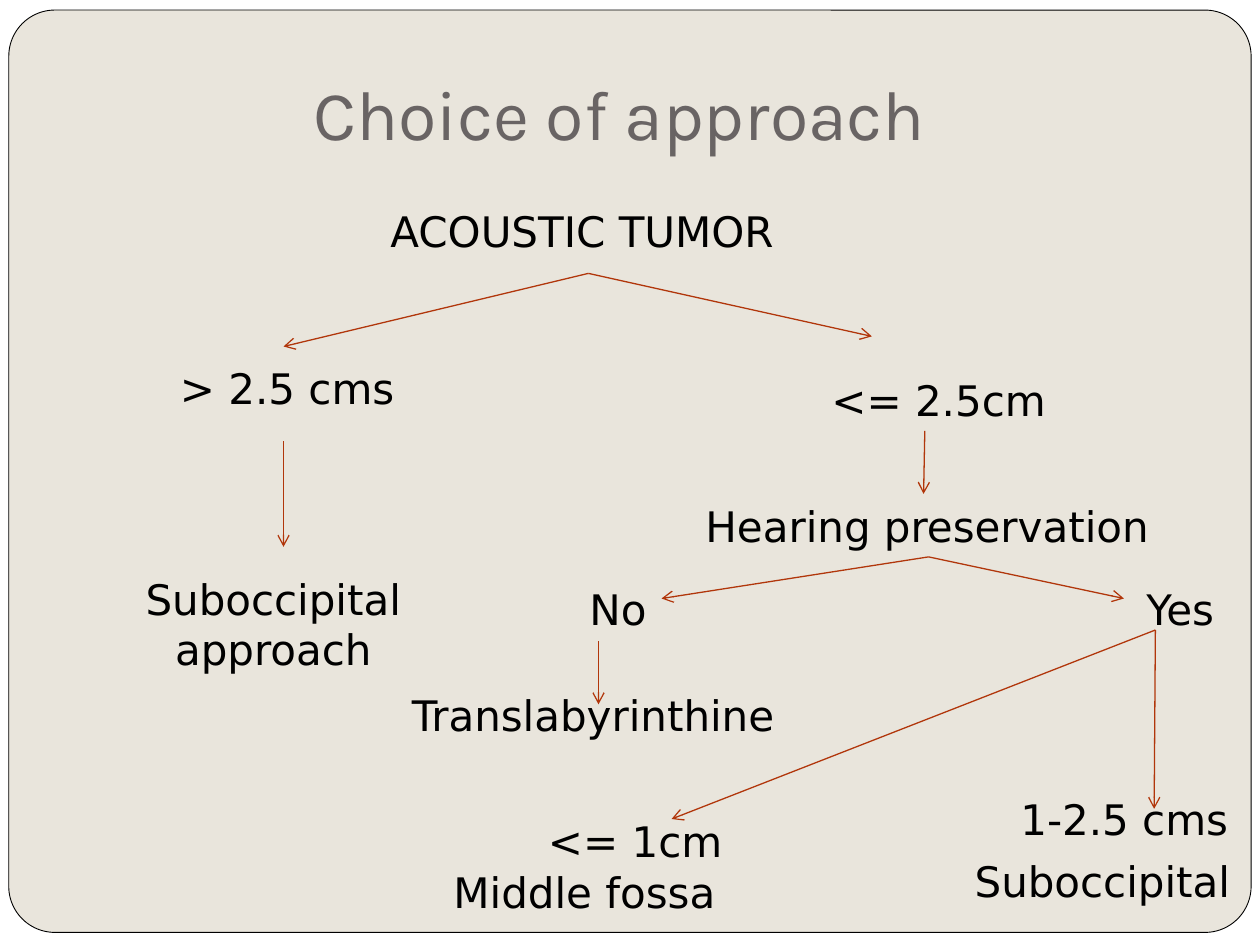
from lxml import etree
from pptx import Presentation
from pptx.dml.color import RGBColor
from pptx.enum.shapes import MSO_CONNECTOR, MSO_SHAPE
from pptx.enum.text import MSO_ANCHOR, MSO_AUTO_SIZE, PP_ALIGN
from pptx.oxml.ns import qn
from pptx.util import Pt

LEFT, MID = PP_ALIGN.LEFT, PP_ALIGN.CENTER
GROW, FIXED = MSO_AUTO_SIZE.SHAPE_TO_FIT_TEXT, MSO_AUTO_SIZE.NONE
BOTTOM, TOP = MSO_ANCHOR.BOTTOM, MSO_ANCHOR.TOP

# Content: lengths in px, 100 px to the inch
SIZE = (1000, 750)
FRAME = (7, 8, 986, 732)
TITLE = ("Choice of approach", (125, 33, 733, 100))
ROW = 51  # height of a one-line label

# text, left, top, width
LABELS = [
    ("ACOUSTIC TUMOR", 300, 158, 335),
    ("> 2.5 cms", 133, 283, 194),
    ("<= 2.5cm", 650, 292, 193),
    ("Hearing preservation", 550, 392, 375),
    ("No", 458, 458, 66),
    ("Yes", 900, 458, 76),
    ("Translabyrinthine", 317, 542, 311),
    ("<= 1cm", 425, 642, 159),
    ("1-2.5 cms", 800, 625, 192),
    ("Middle fossa", 350, 683, 229),
]
# text, left, top, width, height: centred and wrapped
BLOCKS = [
    ("Suboccipital approach", 92, 450, 250, 91),
    ("Suboccipital", 750, 674, 250, ROW),
]
# start point: end points
ARROWS = {
    (467, 217): [(225, 275), (692, 267)],
    (225, 350): [(225, 434)],
    (734, 342): [(733, 392)],
    (737, 442): [(525, 475), (892, 475)],
    (475, 509): [(475, 559)],
    (917, 500): [(533, 650), (916, 642)],
}

THEME = {
    "page": RGBColor.from_string("FFFFFF"),
    "panel": RGBColor.from_string("E9E5DC"),
    "edge": RGBColor.from_string("000000"),
    "arrow": RGBColor.from_string("B1360B"),
    "title": {"name": "Karla", "size": Pt(40), "color": RGBColor.from_string("696464")},
    "label": {"name": "DejaVu Sans", "size": Pt(24), "color": RGBColor.from_string("000000")},
}


def px(*vals):
    return [v * 9144 for v in vals]


def put(obj, vals):
    for key, val in vals.items():
        setattr(obj, key, val)


def write(shape, text, font, align, frame):
    put(shape.text_frame, frame)
    para = shape.text_frame.paragraphs[0]
    para.alignment = align
    run = para.add_run()
    run.text = text
    put(run.font, {"name": font["name"], "size": font["size"]})
    run.font.color.rgb = font["color"]


def label(shapes, text, box, align, wrap):
    shape = shapes.add_textbox(*px(*box))
    write(shape, text, THEME["label"], align,
          {"word_wrap": wrap, "auto_size": GROW, "vertical_anchor": TOP})


def arrow(shapes, start, end):
    line = shapes.add_connector(MSO_CONNECTOR.STRAIGHT, *px(*start, *end))
    line.line.width = Pt(0.75)
    line.line.color.rgb = THEME["arrow"]
    tip = etree.SubElement(line.line._get_or_add_ln(), qn("a:tailEnd"))
    tip.set("type", "arrow")
    etree.SubElement(line._element.spPr, qn("a:effectLst"))


def main():
    deck = Presentation()
    deck.slide_width, deck.slide_height = px(*SIZE)
    slide = deck.slides.add_slide(deck.slide_layouts[5])
    shapes = slide.shapes

    # Page and rounded panel, placed behind the title
    slide.background.fill.solid()
    slide.background.fill.fore_color.rgb = THEME["page"]
    panel = shapes.add_shape(MSO_SHAPE.ROUNDED_RECTANGLE, *px(*FRAME))
    panel.adjustments[0] = 0.05
    panel.shadow.inherit = False
    panel.fill.solid()
    panel.fill.fore_color.rgb = THEME["panel"]
    panel.line.color.rgb = THEME["edge"]
    panel.line.width = Pt(0.5)
    shapes.title._element.addprevious(panel._element)

    # Title
    text, box = TITLE
    put(shapes.title, dict(zip(("left", "top", "width", "height"), px(*box))))
    write(shapes.title, text, THEME["title"], MID,
          {"word_wrap": True, "auto_size": FIXED, "vertical_anchor": BOTTOM,
           "margin_bottom": px(10)[0]})

    # Decision tree
    for text, *box in LABELS:
        label(shapes, text, (*box, ROW), LEFT, False)
    for text, *box in BLOCKS:
        label(shapes, text, box, MID, True)
    for start, ends in ARROWS.items():
        for end in ends:
            arrow(shapes, start, end)

    deck.save("out.pptx")


if __name__ == "__main__":
    main()
